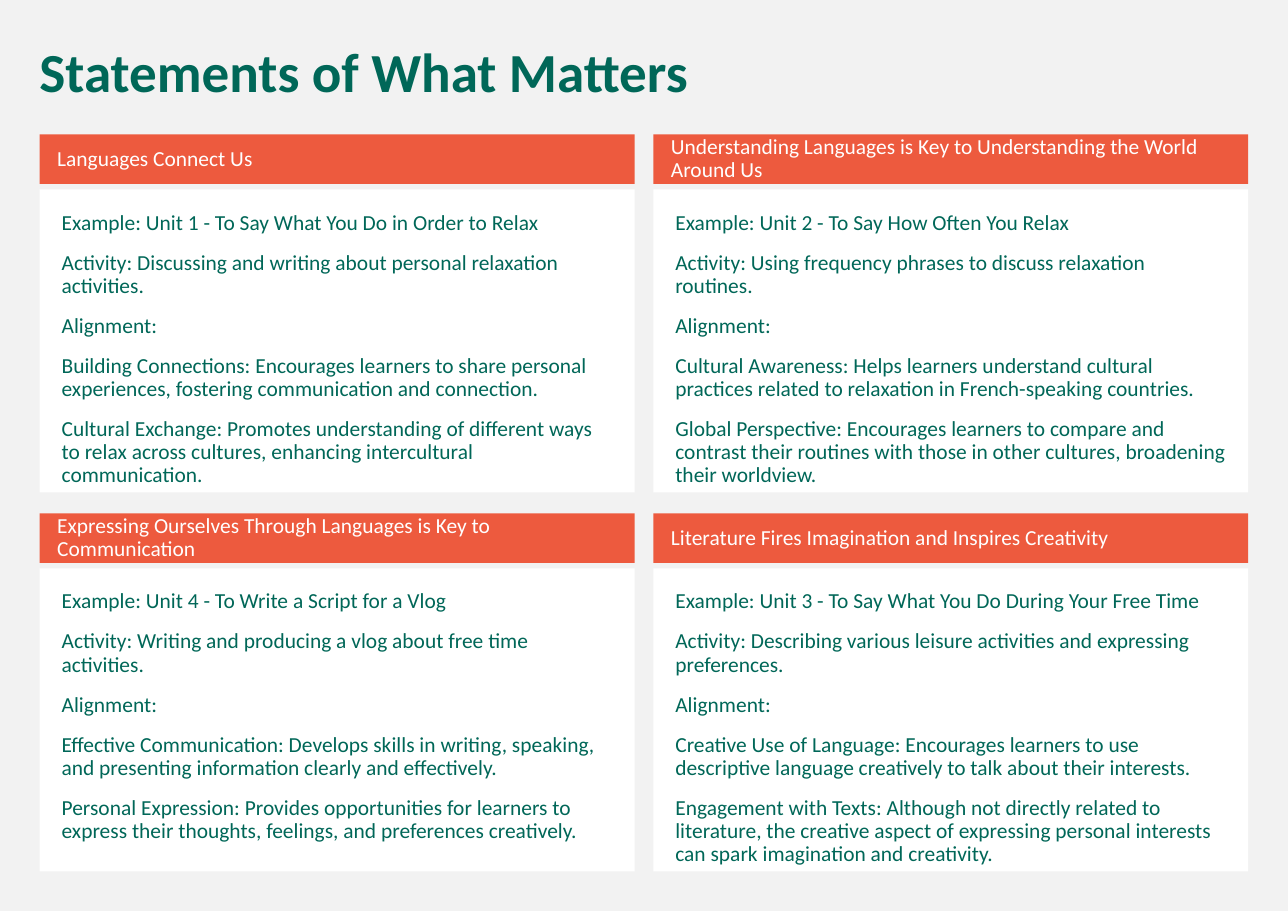
import dataclasses

import pptx
import pptx.dml.color
import pptx.enum.shapes
import pptx.enum.text
import pptx.util


@dataclasses.dataclass(frozen=True)
class Theme:
    font: str = "Calibri"
    background: str = "F2F2F2"
    green: str = "006758"
    orange: str = "ED5A3E"
    white: str = "FFFFFF"
    title_size: int = 36
    text_size: int = 14
    line_spacing: float = 0.9
    space_before: int = 11


class StatementSlide:
    def __init__(self, presentation, theme):
        self.theme = theme
        self.slide = presentation.slides.add_slide(presentation.slide_layouts[6])
        self.paint(self.slide.background.fill, theme.background)

    def paint(self, fill, color):
        fill.solid()
        fill.fore_color.rgb = pptx.dml.color.RGBColor.from_string(color)

    def add_text(self, shape, texts, size, color, margins, anchor, bold=False):
        frame = shape.text_frame
        frame.word_wrap = True
        frame.vertical_anchor = anchor
        frame.margin_left, frame.margin_top, frame.margin_right, frame.margin_bottom = map(
            pptx.util.Pt, margins)
        for index, text in enumerate(texts):
            paragraph = frame.add_paragraph() if index else frame.paragraphs[0]
            paragraph.alignment = pptx.enum.text.PP_ALIGN.LEFT
            paragraph.line_spacing = self.theme.line_spacing
            paragraph.space_before = pptx.util.Pt(self.theme.space_before)
            run = paragraph.add_run()
            run.text = text
            run.font.name = self.theme.font
            run.font.size = pptx.util.Pt(size)
            run.font.bold = bold
            run.font.color.rgb = pptx.dml.color.RGBColor.from_string(color)

    def title(self, text, *box):
        shape = self.slide.shapes.add_textbox(*map(pptx.util.Pt, box))
        self.add_text(shape, [text], self.theme.title_size, self.theme.green,
                      (7.2, 3.6, 7.2, 3.6), pptx.enum.text.MSO_ANCHOR.TOP, bold=True)

    def panel(self, color, *box):
        shape = self.slide.shapes.add_shape(
            pptx.enum.shapes.MSO_SHAPE.RECTANGLE, *map(pptx.util.Pt, box))
        shape.shadow.inherit = False
        shape.line.fill.background()
        self.paint(shape.fill, color)
        return shape

    def header(self, text, *box):
        self.add_text(self.panel(self.theme.orange, *box), [text], self.theme.text_size,
                      self.theme.white, (11.52, 3.6, 7.2, 3.6),
                      pptx.enum.text.MSO_ANCHOR.MIDDLE)

    def body(self, texts, *box):
        self.add_text(self.panel(self.theme.white, *box), texts, self.theme.text_size,
                      self.theme.green, (14.4, 14.4, 14.4, 14.4),
                      pptx.enum.text.MSO_ANCHOR.TOP)


STATEMENTS = [
    ("Languages Connect Us",
     "Example: Unit 1 - To Say What You Do in Order to Relax",
     "Activity: Discussing and writing about personal relaxation activities.",
     "Building Connections: Encourages learners to share personal experiences, "
     "fostering communication and connection.",
     "Cultural Exchange: Promotes understanding of different ways to relax across "
     "cultures, enhancing intercultural communication."),
    ("Understanding Languages is Key to Understanding the World Around Us",
     "Example: Unit 2 - To Say How Often You Relax",
     "Activity: Using frequency phrases to discuss relaxation routines.",
     "Cultural Awareness: Helps learners understand cultural practices related to "
     "relaxation in French-speaking countries.",
     "Global Perspective: Encourages learners to compare and contrast their routines "
     "with those in other cultures, broadening their worldview."),
    ("Expressing Ourselves Through Languages is Key to Communication",
     "Example: Unit 4 - To Write a Script for a Vlog",
     "Activity: Writing and producing a vlog about free time activities.",
     "Effective Communication: Develops skills in writing, speaking, and presenting "
     "information clearly and effectively.",
     "Personal Expression: Provides opportunities for learners to express their "
     "thoughts, feelings, and preferences creatively."),
    ("Literature Fires Imagination and Inspires Creativity",
     "Example: Unit 3 - To Say What You Do During Your Free Time",
     "Activity: Describing various leisure activities and expressing preferences.",
     "Creative Use of Language: Encourages learners to use descriptive language "
     "creatively to talk about their interests.",
     "Engagement with Texts: Although not directly related to literature, the creative "
     "aspect of expressing personal interests can spark imagination and creativity."),
]

LEFT, TOP = 25.92, 87.84
COLUMN_STEP, ROW_STEP = 401.04, 247.68
WIDTH, HEADER_HEIGHT, BODY_HEIGHT, BODY_OFFSET = 388.8, 32.4, 198, 36


def main():
    presentation = pptx.Presentation()
    presentation.slide_width = pptx.util.Pt(841.68)
    presentation.slide_height = pptx.util.Pt(595.44)
    slide = StatementSlide(presentation, Theme())
    slide.title("Statements of What Matters", 18.72, 25.92, 797.76, 46.8)
    for index, (heading, example, activity, *alignments) in enumerate(STATEMENTS):
        row, column = divmod(index, 2)
        left = LEFT + column * COLUMN_STEP
        top = TOP + row * ROW_STEP
        slide.header(heading, left, top, WIDTH, HEADER_HEIGHT)
        slide.body([example, activity, "Alignment:", *alignments],
                   left, top + BODY_OFFSET, WIDTH, BODY_HEIGHT)
    presentation.save("out.pptx")


if __name__ == "__main__":
    main()
